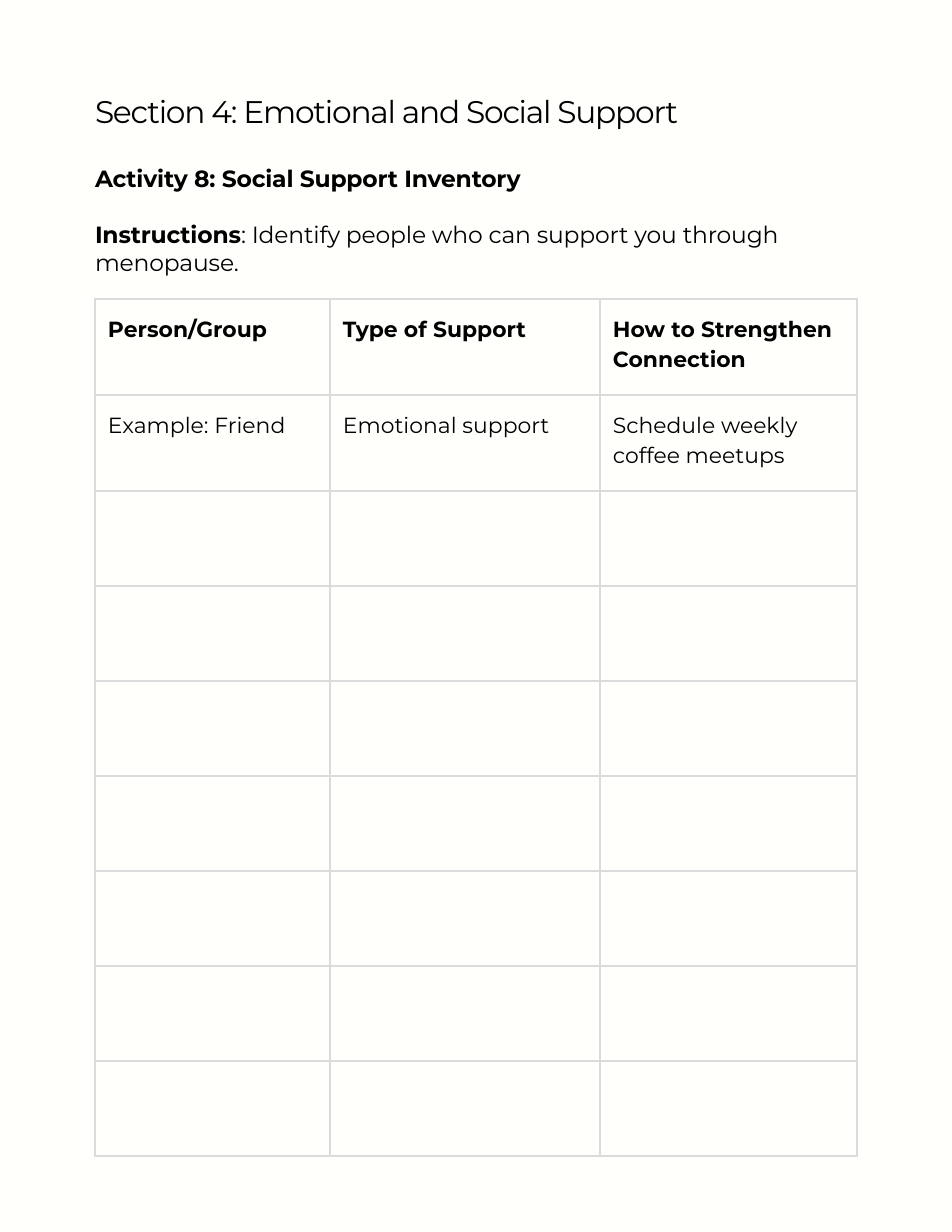
from dataclasses import dataclass

from lxml import etree
from pptx import Presentation
from pptx.dml.color import RGBColor
from pptx.enum import text
from pptx.oxml import ns
from pptx.util import Emu, Pt

PX = 8128
FONT = "Montserrat"
INK = RGBColor(0x00, 0x00, 0x00)
PAPER = RGBColor(0xFF, 0xFF, 0xFC)
GRID = RGBColor(0xDB, 0xDB, 0xDB)


@dataclass
class Run:
    words: str
    size: int
    bold: bool = False
    track: int = 0


@dataclass
class Para:
    runs: list[Run]
    pitch: float = 18
    after: int = 0


@dataclass
class Block:
    left: int
    top: int
    width: int
    height: int
    paras: list[Para]


def px(count: int) -> Emu:
    return Emu(count * PX)


def write(frame, paras: list[Para]) -> None:
    for i, para in enumerate(paras):
        line = frame.add_paragraph() if i else frame.paragraphs[0]
        line.alignment = text.PP_ALIGN.LEFT
        line.line_spacing = Pt(para.pitch)
        line.space_before = Pt(0)
        line.space_after = Pt(para.after)
        for item in para.runs:
            run = line.add_run()
            run.text = item.words
            font = run.font
            font.name, font.size, font.bold = FONT, Pt(item.size), item.bold
            font.color.rgb = INK
            if item.track:
                run._r.get_or_add_rPr().set("spc", str(item.track))


def place(shape, block: Block) -> None:
    shape.left, shape.top = px(block.left), px(block.top)
    shape.width, shape.height = px(block.width), px(block.height)
    frame = shape.text_frame
    frame.margin_left = frame.margin_right = 0
    frame.margin_top = frame.margin_bottom = 0
    frame.word_wrap = True
    frame.auto_size = text.MSO_AUTO_SIZE.NONE
    frame.vertical_anchor = text.MSO_ANCHOR.TOP
    write(frame, block.paras)
    for line in frame.paragraphs:
        props = line._p.get_or_add_pPr()
        props.set("marL", "0")
        props.set("indent", "0")
        etree.SubElement(props, ns.qn("a:buNone"))


def edge(cell) -> None:
    props = cell._tc.get_or_add_tcPr()
    for i, side in enumerate(("lnL", "lnR", "lnT", "lnB")):
        line = etree.Element(ns.qn(f"a:{side}"), w=str(Pt(1.5)))
        fill = etree.SubElement(line, ns.qn("a:solidFill"))
        etree.SubElement(fill, ns.qn("a:srgbClr"), val=str(GRID))
        props.insert(i, line)


def draw_grid(slide, left: int, top: int, cols: list[int],
              rows: list[int], words: list[list[str]]) -> None:
    table = slide.shapes.add_table(len(rows), len(cols), px(left), px(top),
                                   px(sum(cols)), px(sum(rows))).table
    table.first_row = table.horz_banding = False
    for col, width in zip(table.columns, cols):
        col.width = px(width)
    for row, height in zip(table.rows, rows):
        row.height = px(height)
    for cell in table.iter_cells():
        cell.fill.background()
        cell.margin_left = cell.margin_right = px(13)
        cell.margin_top = cell.margin_bottom = px(13)
        edge(cell)
    for r, line in enumerate(words):
        for c, word in enumerate(line):
            write(table.cell(r, c).text_frame,
                  [Para([Run(word, 14, bold=r == 0)], pitch=19.6)])


TITLE = Block(95, 102, 762, 30, [
    Para([Run("Section 4: Emotional and Social Support", 20, track=-80)]),
])
INTRO = Block(95, 164, 762, 104, [
    Para([Run("Activity 8: Social Support Inventory", 15, True, -10)], after=18),
    Para([Run("Instructions", 15, True, -10),
          Run(": Identify people who can support you through menopause.",
              15, track=-10)]),
])
WORDS = [
    ["Person/Group", "Type of Support", "How to Strengthen Connection"],
    ["Example: Friend", "Emotional support", "Schedule weekly coffee meetups"],
]


def main() -> None:
    deck = Presentation()
    deck.slide_width, deck.slide_height = px(952), px(1232)
    slide = deck.slides.add_slide(deck.slide_layouts[1])
    fill = slide.background.fill
    fill.solid()
    fill.fore_color.rgb = PAPER
    place(slide.shapes.title, TITLE)
    place(slide.placeholders[1], INTRO)
    draw_grid(slide, 95, 299, [235, 270, 257], [96] * 2 + [95] * 7, WORDS)
    deck.save("out.pptx")


if __name__ == "__main__":
    main()
